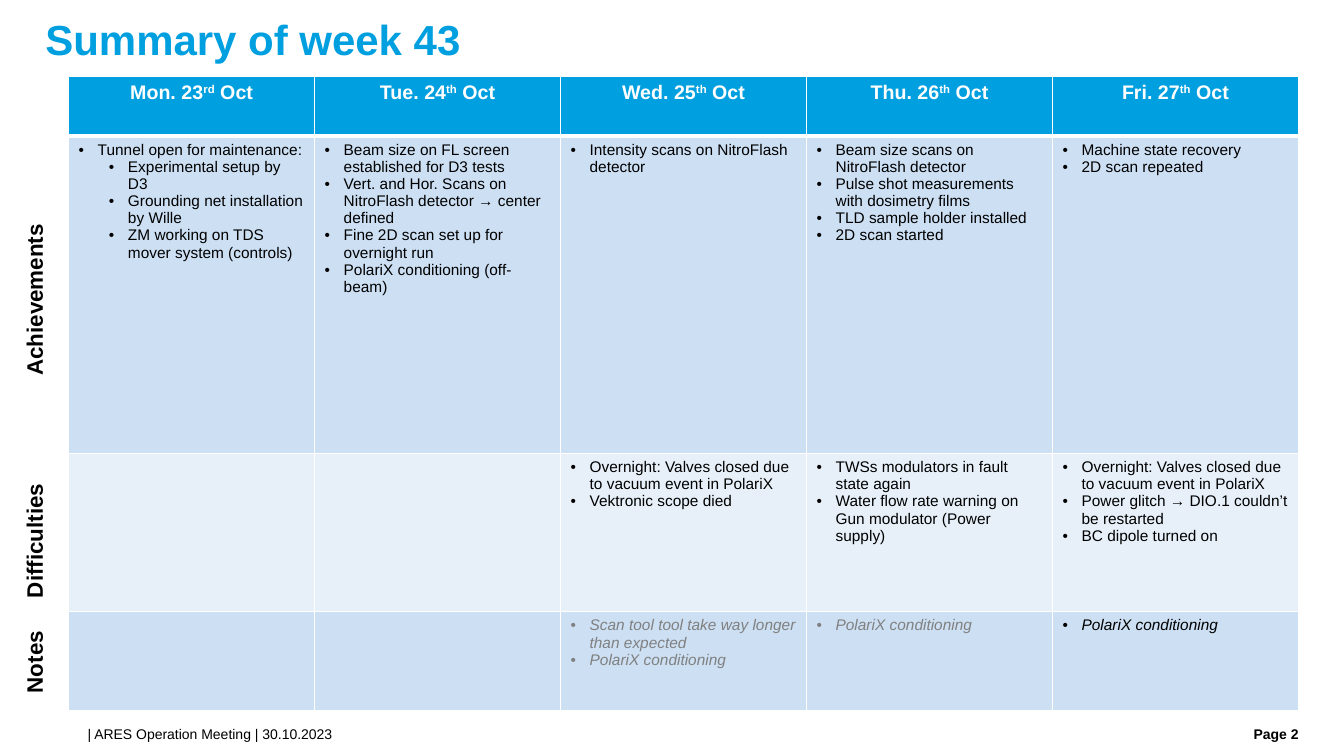
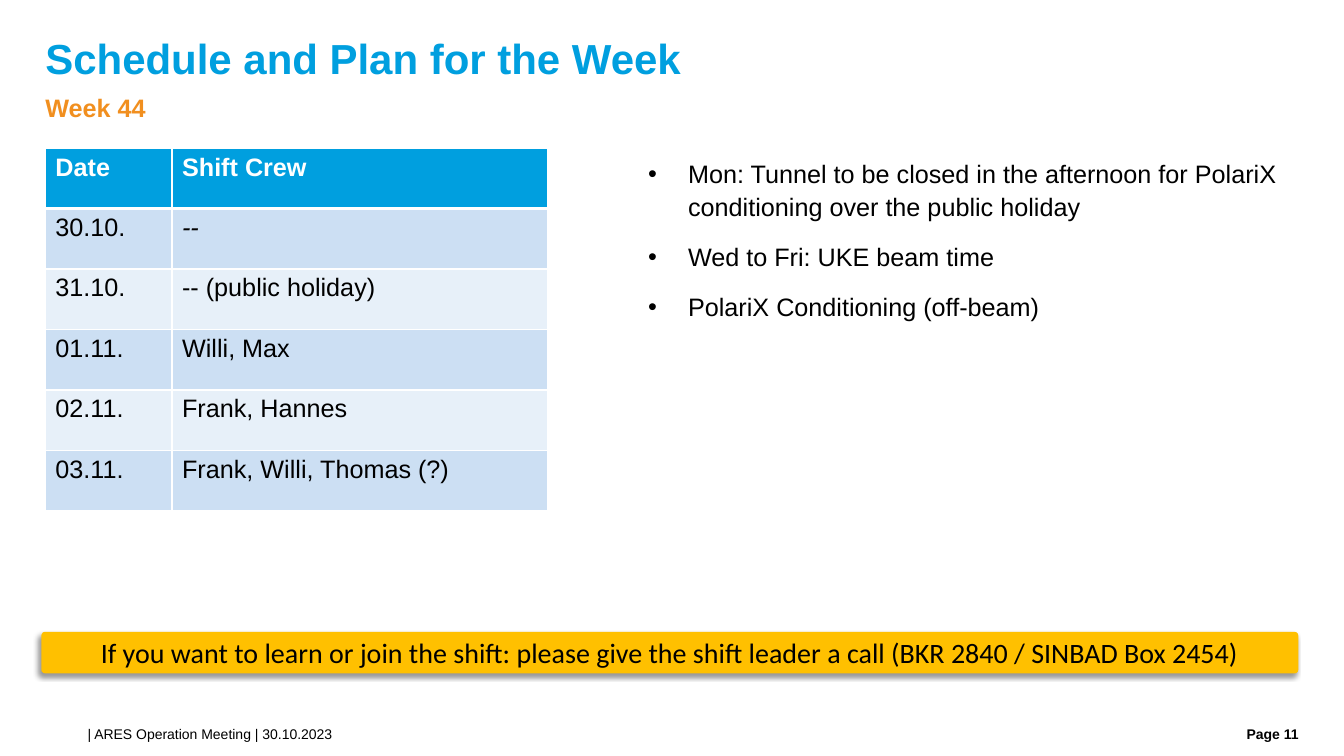
from lxml.etree import SubElement as Sub
from pptx import Presentation
from pptx.dml.color import RGBColor
from pptx.enum.shapes import MSO_SHAPE as Kind
from pptx.enum.text import MSO_ANCHOR as Anchor, MSO_AUTO_SIZE as Fit, PP_ALIGN as Align
from pptx.oxml.ns import qn
from pptx.util import Pt

BLUE, ORANGE, GOLD = "009FDF", "F18F1F", "FFC000"
WHITE, BLACK, GREY = "FFFFFF", "000000", "808080"
BANDS = ("E7F0F9", "CCDFF3")
LEFT, WIDE = 32.4, 895.6


def rgb(code):
    return RGBColor.from_string(code)


class Deck:
    """Holds the shared style and the current slide."""

    def __init__(self):
        self.file = Presentation()
        self.file.slide_width, self.file.slide_height = Pt(960), Pt(540)
        self.slide = None

    # --- Text ---
    def run(self, para, text, size, color=BLACK, bold=False, slant=False,
            face="Arial", raised=False):
        run = para.add_run()
        run.text = text
        font = run.font
        font.name, font.size = face, Pt(size)
        font.bold, font.italic = bold, slant
        font.color.rgb = rgb(color)
        if raised:
            run._r.get_or_add_rPr().set("baseline", "30000")

    def mark(self, para, left, hang):
        props = para._p.get_or_add_pPr()
        props.set("marL", str(Pt(left)))
        props.set("indent", str(Pt(-hang)))
        if hang:
            Sub(props, qn("a:buFont")).set("typeface", "Arial")
            Sub(props, qn("a:buChar")).set("char", "•")
        else:
            Sub(props, qn("a:buNone"))

    def lines(self, frame):
        """Yield the first paragraph, then new ones without end."""
        yield frame.paragraphs[0]
        while True:
            yield frame.add_paragraph()

    def bare(self, frame):
        frame.margin_left = frame.margin_right = 0
        frame.margin_top = frame.margin_bottom = 0
        frame.word_wrap = True
        frame.auto_size = Fit.NONE
        frame.vertical_anchor = Anchor.TOP

    def box(self, x, y, w, h):
        return self.slide.shapes.add_textbox(Pt(x), Pt(y), Pt(w), Pt(h))

    # --- Slide frame ---
    def page(self, layout, title, top, number):
        self.slide = self.file.slides.add_slide(self.file.slide_layouts[layout])
        para = self.hold(0, LEFT, top, WIDE, 35.2).paragraphs[0]
        para.alignment = Align.LEFT
        para.line_spacing = 0.9
        self.run(para, title, 30, BLUE, True)
        feet = ((62.6, 783.4, "| ARES Operation Meeting | 30.10.2023", Align.LEFT, False),
                (854, 73.6, f"Page {number}", Align.RIGHT, True))
        for x, w, text, align, bold in feet:
            frame = self.box(x, 518.4, w, 14.4).text_frame
            self.bare(frame)
            frame.paragraphs[0].alignment = align
            self.run(frame.paragraphs[0], text, 10, bold=bold)

    def hold(self, index, x, y, w, h):
        spot = self.slide.placeholders[index]
        spot.left, spot.top, spot.width, spot.height = Pt(x), Pt(y), Pt(w), Pt(h)
        self.bare(spot.text_frame)
        return spot.text_frame

    def body(self, index, area, items, color=BLACK, bold=False, hang=0, after=0):
        frame = self.hold(index, *area)
        for text, para in zip(items, self.lines(frame)):
            self.mark(para, hang, hang)
            para.line_spacing = 1.1
            para.space_before, para.space_after = Pt(0), Pt(after)
            self.run(para, text, 18, color, bold)

    # --- Table ---
    def grid(self, x, y, cols, rows):
        shape = self.slide.shapes.add_table(len(rows), len(cols), Pt(x), Pt(y),
                                            Pt(sum(cols)), Pt(sum(rows)))
        table = shape.table
        for col, w in zip(table.columns, cols):
            col.width = Pt(w)
        for r, h in enumerate(rows):
            table.rows[r].height = Pt(h)
            for cell in table.rows[r].cells:
                self.edge(cell, r)
                cell.fill.solid()
                cell.fill.fore_color.rgb = rgb(BANDS[r % 2] if r else BLUE)
        return table

    def edge(self, cell, row):
        props = cell._tc.get_or_add_tcPr()
        for side in "LRTB":
            thick = (row, side) in ((0, "B"), (1, "T"))
            line = Sub(props, qn("a:ln" + side))
            line.set("w", str(Pt(3 if thick else 1)))
            Sub(Sub(line, qn("a:solidFill")), qn("a:srgbClr")).set("val", WHITE)

    def list(self, cell, items, **style):
        for item, para in zip(items, self.lines(cell.text_frame)):
            level, text = item if isinstance(item, tuple) else (0, item)
            para.level = level
            self.mark(para, 13.6 + 21.6 * level, 13.6)
            self.run(para, text, 11, **style)

    # --- Shapes ---
    def side(self, text, mid, w):
        h = 26.6
        label = self.box(24.4 - w / 2, mid - h / 2, w, h)
        label.rotation = 270
        label.text_frame.word_wrap = False
        label.text_frame.auto_size = Fit.SHAPE_TO_FIT_TEXT
        self.run(label.text_frame.paragraphs[0], text, 16, bold=True)

    def banner(self, text, x, y, w, h):
        bar = self.slide.shapes.add_shape(Kind.ROUNDED_RECTANGLE, Pt(x), Pt(y), Pt(w), Pt(h))
        bar.adjustments[0] = 0.085
        bar.fill.solid()
        bar.fill.fore_color.rgb = rgb(GOLD)
        bar.line.fill.background()
        bar.shadow.inherit = False
        glow = Sub(bar._element.spPr.find(qn("a:effectLst")), qn("a:outerShdw"))
        for key, val in (("blurRad", Pt(4)), ("dist", Pt(3)), ("dir", 135 * 60000),
                         ("algn", "tr"), ("rotWithShape", 0)):
            glow.set(key, str(val))
        tint = Sub(glow, qn("a:srgbClr"))
        tint.set("val", BLACK)
        Sub(tint, qn("a:alpha")).set("val", "40000")
        frame = bar.text_frame
        frame.word_wrap = True
        frame.vertical_anchor = Anchor.MIDDLE
        frame.paragraphs[0].alignment = Align.CENTER
        self.run(frame.paragraphs[0], text, 20, face="Calibri")


DAYS = (("Mon. 23", "rd"), ("Tue. 24", "th"), ("Wed. 25", "th"),
        ("Thu. 26", "th"), ("Fri. 27", "th"))
VALVES = "Overnight: Valves closed due to vacuum event in PolariX"
COND = "PolariX conditioning"
WORK = (
    # Achievements
    (("Tunnel open for maintenance:",
      (1, "Experimental setup by D3"),
      (1, "Grounding net installation by Wille"),
      (1, "ZM working on TDS mover system (controls)")),
     ("Beam size on FL screen established for D3 tests",
      "Vert. and Hor. Scans on NitroFlash detector → center defined",
      "Fine 2D scan set up for overnight run",
      "PolariX conditioning (off-beam)"),
     ("Intensity scans on NitroFlash detector",),
     ("Beam size scans on NitroFlash detector",
      "Pulse shot measurements with dosimetry films",
      "TLD sample holder installed",
      "2D scan started"),
     ("Machine state recovery", "2D scan repeated")),
    # Difficulties
    ((), (),
     (VALVES, "Vektronic scope died"),
     ("TWSs modulators in fault state again",
      "Water flow rate warning on Gun modulator (Power supply)"),
     (VALVES, "Power glitch → DIO.1 couldn’t be restarted", "BC dipole turned on")),
    # Notes
    ((), (),
     ("Scan tool tool take way longer than expected", COND),
     (COND,),
     (COND,)),
)
CREW = (("Date", "Shift Crew"), ("30.10.", "--"), ("31.10.", "-- (public holiday)"),
        ("01.11.", "Willi, Max"), ("02.11.", "Frank, Hannes"),
        ("03.11.", "Frank, Willi, Thomas (?)"))


def week(deck):
    deck.page(5, "Summary of week 43", 13.7, 2)
    table = deck.grid(49, 54.8, [175.7] * 5, [42.5, 226.8, 113, 70.6])
    for c, (day, tail) in enumerate(DAYS):
        para = table.cell(0, c).text_frame.paragraphs[0]
        para.alignment = Align.CENTER
        for text, raised in ((day, False), (tail, True), (" Oct", False)):
            deck.run(para, text, 14, WHITE, True, raised=raised)
    for r, row in enumerate(WORK, 1):
        note = r == 3
        for c, items in enumerate(row):
            color = GREY if note and c < 4 else BLACK
            deck.list(table.cell(r, c), items, color=color, slant=note)
    for text, mid, w in (("Achievements", 213.5, 123.8), ("Difficulties", 385.6, 97.2),
                         ("Notes", 472.7, 59)):
        deck.side(text, mid, w)


def plan(deck):
    deck.page(3, "Schedule and Plan for the Week", 27.4, 11)
    deck.body(1, (LEFT, 64, WIDE, 29.5), ["Week 44"], ORANGE, True)
    deck.banner("If you want to learn or join the shift: please give the shift leader"
                " a call (BKR 2840 / SINBAD Box 2454)", 29.6, 451.4, 897.8, 29.6)
    table = deck.grid(LEFT, 105.8, [90.5, 268], [43.2] * len(CREW))
    for r, row in enumerate(CREW):
        for c, text in enumerate(row):
            deck.run(table.cell(r, c).text_frame.paragraphs[0], text, 18,
                     BLACK if r else WHITE, bold=not r, slant=text == "--")
    deck.body(2, (463, 111, 465, 273),
              ["Mon: Tunnel to be closed in the afternoon for PolariX"
               " conditioning over the public holiday",
               "Wed to Fri: UKE beam time",
               "PolariX Conditioning (off-beam)"], hang=28.5, after=12)


def main():
    deck = Deck()
    week(deck)
    plan(deck)
    deck.file.save("out.pptx")


if __name__ == "__main__":
    main()
